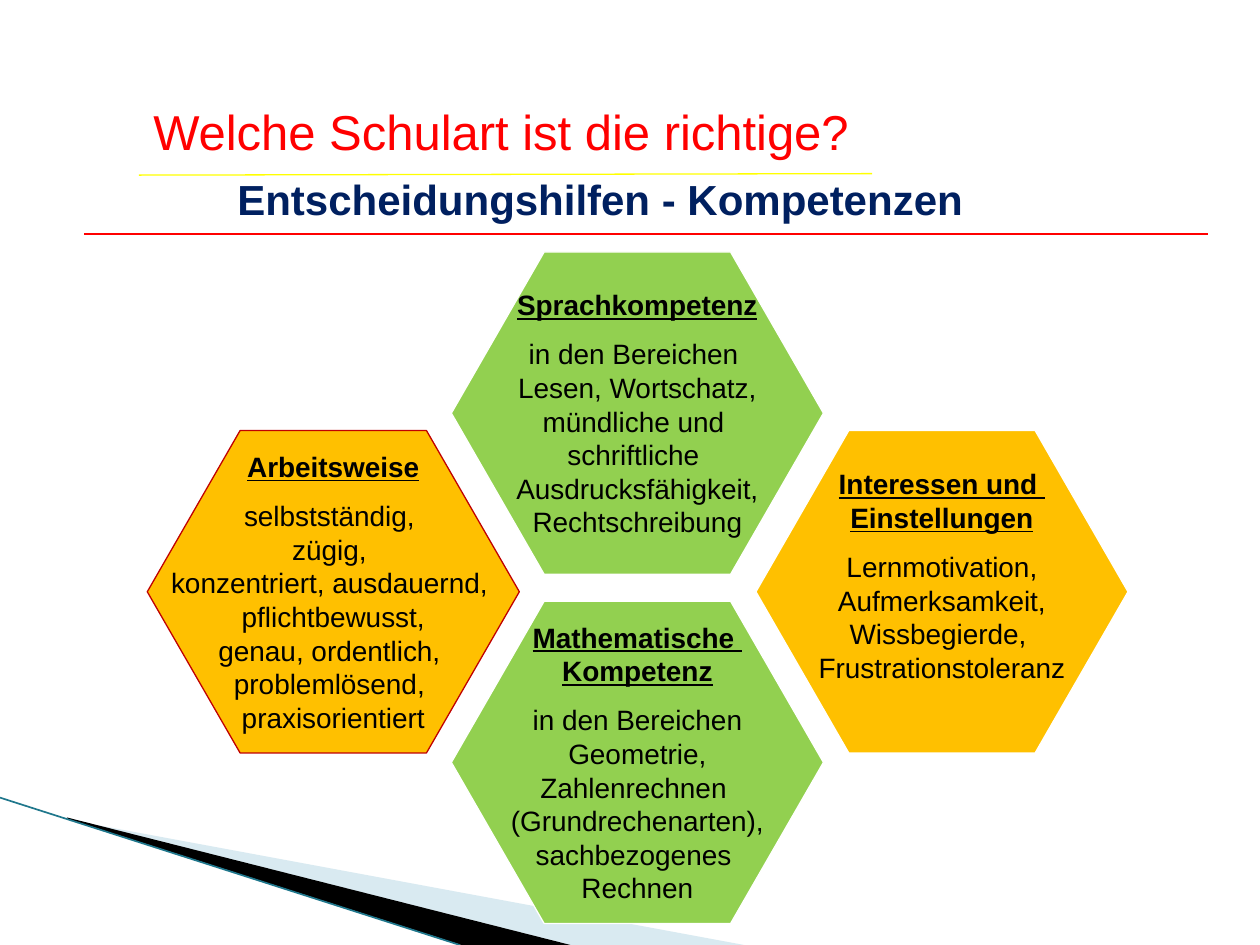
from pptx import Presentation
from pptx import util as u
from pptx.dml.color import RGBColor
from pptx.enum import shapes, text
from pptx.oxml.ns import qn
from lxml import etree

RED = RGBColor(0xFF, 0x00, 0x00)
YELLOW = RGBColor(0xFF, 0xFF, 0x00)
NAVY = RGBColor(0x00, 0x20, 0x60)
GREEN = RGBColor(0x92, 0xD0, 0x50)
AMBER = RGBColor(0xFF, 0xC0, 0x00)
DARK_RED = RGBColor(0xC0, 0x00, 0x00)
PALE_BLUE = RGBColor(0xA0, 0xCB, 0xDC)
EDGE_BLUE = RGBColor(0x1F, 0x77, 0x8C)
BLACK = RGBColor(0x00, 0x00, 0x00)
WHITE = RGBColor(0xFF, 0xFF, 0xFF)

prs = Presentation()
prs.slide_width, prs.slide_height = u.Cm(25.4), u.Cm(19.05)
s = prs.slides.add_slide(prs.slide_layouts[6])


def format_run(r, size, color, bold=False, underline=False):
    r.font.name = "Arial"
    r.font.size = u.Pt(size)
    r.font.color.rgb = color
    r.font.bold = bold
    r.font.underline = underline


wedges = [
    (PALE_BLUE, 40, [(1.4, 16.53), (15, 19.05), (11.5, 19.05), (1.4, 16.5)]),
    (BLACK, 100, [(1.35, 16.48), (11.5, 19.05), (9.3, 19.05), (1.37, 16.51)]),
]
for color, opacity, points in wedges:
    points = [(u.Cm(x), u.Cm(y)) for x, y in points]
    fb = s.shapes.build_freeform(*points[0])
    fb.add_line_segments(points[1:])
    sp = fb.convert_to_shape()
    sp.shadow.inherit = False
    sp.fill.solid()
    sp.fill.fore_color.rgb = color
    sp.line.fill.background()
    if opacity < 100:
        clr = sp._element.spPr.find(qn("a:solidFill"))[0]
        etree.SubElement(clr, qn("a:alpha")).set("val", str(opacity * 1000))

lines = [
    (0, 16.08, 9.27, 19.05, EDGE_BLUE, 0.95),
    (2.8, 3.53, 17.58, 3.5, YELLOW, 0.75),
    (1.7, 4.72, 24.35, 4.72, RED, 0.75),
]
for x1, y1, x2, y2, color, width in lines:
    c = s.shapes.add_connector(
        shapes.MSO_CONNECTOR.STRAIGHT, u.Cm(x1), u.Cm(y1), u.Cm(x2), u.Cm(y2))
    c.line.color.rgb = color
    c.line.width = u.Pt(width)
    etree.SubElement(c._element.spPr, qn("a:effectLst"))

titles = [
    ("Welche Schulart ist die richtige?", 1.7, 1.93, 16.8, 1.45, 28, RED, False),
    ("Entscheidungshilfen - Kompetenzen", 4, 3.38, 16.2, 1.3, 24, NAVY, True),
]
for title, x, y, w, h, size, color, bold in titles:
    tf = s.shapes.add_textbox(u.Cm(x), u.Cm(y), u.Cm(w), u.Cm(h)).text_frame
    tf.word_wrap = True
    p = tf.paragraphs[0]
    p.text = title
    p.alignment = text.PP_ALIGN.CENTER
    format_run(p.runs[0], size, color, bold)

hexagons = [
    (9.1, 5.08, GREEN, WHITE, 0.13, ["Sprachkompetenz"],
     ["in den Bereichen ", "Lesen, Wortschatz,", "mündliche und ",
      "schriftliche ", "Ausdrucksfähigkeit,", "Rechtschreibung"]),
    (9.1, 12.12, GREEN, WHITE, 0.13, ["Mathematische ", "Kompetenz"],
     ["in den Bereichen", "Geometrie,", "Zahlenrechnen ",
      "(Grundrechenarten),", "sachbezogenes ", "Rechnen"]),
    (15.24, 8.68, AMBER, WHITE, 0.78, ["Interessen und ", "Einstellungen"],
     ["Lernmotivation,", "Aufmerksamkeit,", "Wissbegierde, ",
      "Frustrationstoleranz"]),
    (2.97, 8.68, AMBER, DARK_RED, 0.13, ["Arbeitsweise"],
     ["selbstständig, ", "zügig, ", "konzentriert, ausdauernd, ",
      "pflichtbewusst,", "genau, ordentlich, ", "problemlösend, ",
      "praxisorientiert"]),
]
for x, y, fill, line, bottom, heading, body in hexagons:
    sp = s.shapes.add_shape(
        shapes.MSO_SHAPE.HEXAGON, u.Cm(x), u.Cm(y), u.Cm(7.5), u.Cm(6.5))
    sp.adjustments[0] = 0.288
    sp.shadow.inherit = False
    sp.fill.solid()
    sp.fill.fore_color.rgb = fill
    sp.line.color.rgb = line
    sp.line.width = u.Pt(0.75)
    tf = sp.text_frame
    tf.text = "\n".join(heading + body)
    tf.word_wrap = False
    tf.vertical_anchor = text.MSO_ANCHOR.MIDDLE
    tf.margin_bottom = u.Cm(bottom)
    for i, p in enumerate(tf.paragraphs):
        is_heading = i < len(heading)
        p.alignment = text.PP_ALIGN.CENTER
        if i == len(heading):
            p.space_before = u.Pt(9)
        format_run(p.runs[0], 16, BLACK, is_heading, is_heading)

prs.save("out.pptx")
